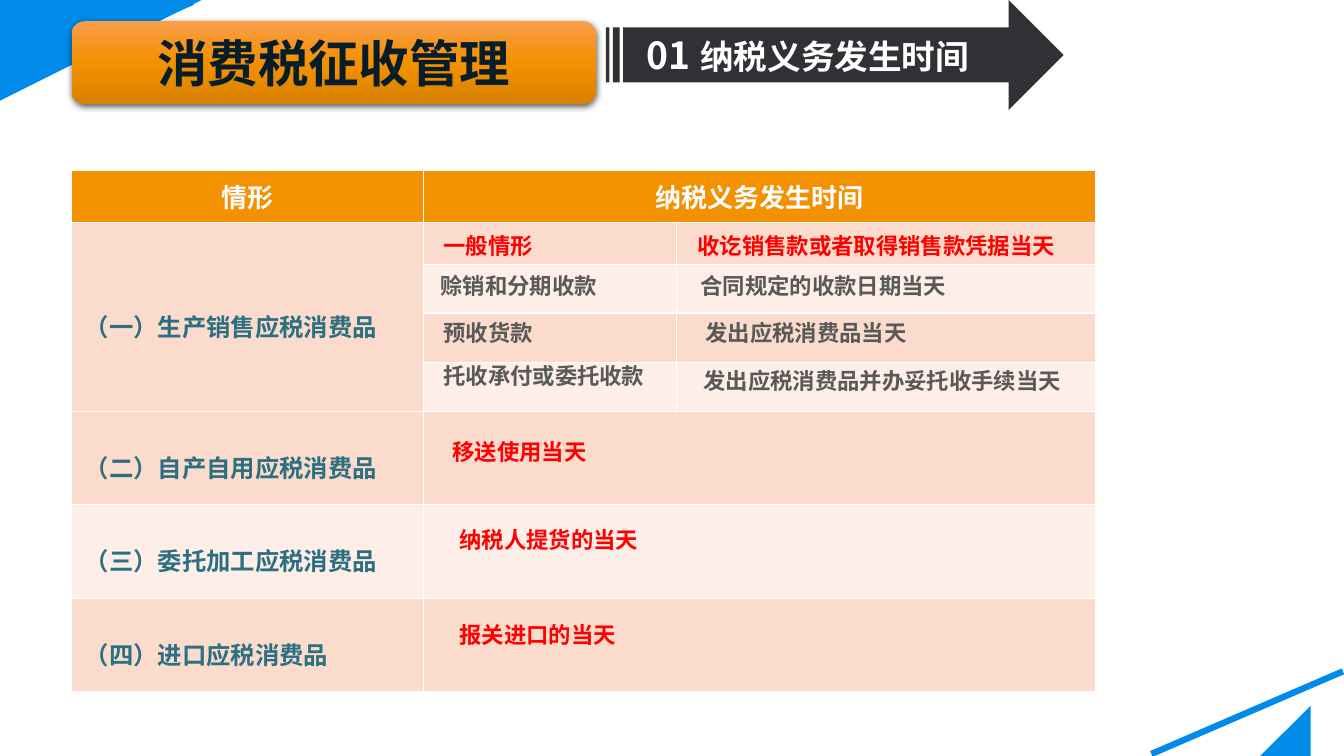
from lxml.etree import SubElement
from pptx import Presentation
from pptx.dml.color import RGBColor
from pptx.enum.shapes import MSO_CONNECTOR, MSO_SHAPE
from pptx.enum.text import MSO_ANCHOR, MSO_AUTO_SIZE, PP_ALIGN
from pptx.oxml import parse_xml
from pptx.oxml.ns import nsdecls, qn
from pptx.util import Inches, Pt

FONT = "Noto Sans CJK SC"
BLUE, ORANGE, RED, GREY, TEAL = "018BE9", "F49100", "FF0000", "595959", "2B6F81"
WHITE, CHARCOAL, NAVY = "FFFFFF", "323034", "071D28"
PEACH, PALE = "FBDCCC", "FDEEE7"
WIDTH, HEIGHT = 13.33, 7.5

COLUMNS = [3.49, 2.51, 4.16]
ROWS = [0.51, 0.42, 0.48, 0.49, 0.49, 0.92, 0.93, 0.93]
HEADINGS = ["情形", "纳税义务发生时间"]
CASES = {
    1: "（一）生产销售应税消费品",
    5: "（二）自产自用应税消费品",
    6: "（三）委托加工应税消费品",
    7: "（四）进口应税消费品",
}
ENTRIES = [
    (3.59, 0.56, 1.09, "一般情形", RED),
    (3.56, 0.96, 1.76, "赊销和分期收款", GREY),
    (3.59, 1.43, 1.09, "预收货款", GREY),
    (3.59, 1.85, 2.2, "托收承付或委托收款", GREY),
    (6.11, 0.56, 3.76, "收讫销售款或者取得销售款凭据当天", RED),
    (6.14, 0.96, 2.64, "合同规定的收款日期当天", GREY),
    (6.19, 1.43, 2.2, "发出应税消费品当天", GREY),
    (6.17, 1.9, 3.76, "发出应税消费品并办妥托收手续当天", GREY),
    (3.68, 2.61, 1.53, "移送使用当天", RED),
    (3.75, 3.48, 1.98, "纳税人提货的当天", RED),
    (3.75, 4.42, 1.76, "报关进口的当天", RED),
]


def colour(value):
    return RGBColor.from_string(value)


def set_font(font, size, value):
    font.size = Pt(size)
    font.bold = True
    font.name = FONT
    font.color.rgb = colour(value)
    latin = font._element.find(qn("a:latin")) if hasattr(font, "_element") else font._rPr.find(qn("a:latin"))
    latin.addnext(parse_xml(f'<a:ea {nsdecls("a")} typeface="{FONT}"/>'))


def write(para, text, size, value, align=PP_ALIGN.LEFT):
    para.text = text
    para.alignment = align
    set_font(para.font, size, value)


def add_corner(page, place):
    points = [place(x, y) for x, y in [(0, 0.74), (0, 0), (1.71, 0)]]
    builder = page.shapes.build_freeform(*points[0], scale=Inches(1))
    builder.add_line_segments(points[1:], close=True)
    triangle = builder.convert_to_shape()
    triangle.shadow.inherit = False
    triangle.fill.solid()
    triangle.fill.fore_color.rgb = colour(BLUE)
    triangle.line.fill.background()
    ends = [Inches(length) for point in [(0.01, 0.84), (1.91, 0.02)] for length in place(*point)]
    stripe = page.shapes.add_connector(MSO_CONNECTOR.STRAIGHT, *ends)
    stripe.line.color.rgb = colour(BLUE)
    stripe.line.width = Pt(4.5)
    SubElement(stripe._element.spPr, qn("a:effectLst"))


def add_schedule(page, left, top):
    frame = page.shapes.add_table(
        len(ROWS), len(COLUMNS), Inches(left), Inches(top), Inches(sum(COLUMNS)), Inches(sum(ROWS)))
    table = frame.table
    table.horz_banding = False
    for column, width in zip(table.columns, COLUMNS):
        column.width = Inches(width)
    for index, (row, height) in enumerate(zip(table.rows, ROWS)):
        row.height = Inches(height)
        for cell in row.cells:
            cell.fill.solid()
            cell.fill.fore_color.rgb = colour(ORANGE if index == 0 else PEACH if index % 2 else PALE)
            cell.vertical_anchor = MSO_ANCHOR.MIDDLE
            cell.margin_left = cell.margin_right = Inches(0.13)
            cell.margin_top = cell.margin_bottom = Inches(0.07)
            cell.text_frame.paragraphs[0].font.size = Pt(10)
    for index in (0, 5, 6, 7):
        table.cell(index, 1).merge(table.cell(index, 2))
    table.cell(1, 0).merge(table.cell(4, 0))
    for index, heading in enumerate(HEADINGS):
        write(table.cell(0, index).text_frame.paragraphs[0], heading, 18.6, WHITE, PP_ALIGN.CENTER)
    for index, case in CASES.items():
        para = table.cell(index, 0).text_frame.paragraphs[0]
        write(para, case, 17.4, TEAL)
        para.line_spacing = 1.5
    for x, y, width, text, value in ENTRIES:
        box = page.shapes.add_textbox(Inches(left + x), Inches(top + y), Inches(width), Inches(0.37))
        box.text_frame.word_wrap = False
        box.text_frame.auto_size = MSO_AUTO_SIZE.SHAPE_TO_FIT_TEXT
        write(box.text_frame.paragraphs[0], text, 16, value)


def add_section_arrow(page, left, top, width, height):
    arrow = page.shapes.add_shape(
        MSO_SHAPE.STRIPED_RIGHT_ARROW, Inches(left), Inches(top), Inches(width), Inches(height))
    arrow.shadow.inherit = False
    arrow.fill.solid()
    arrow.fill.fore_color.rgb = colour(CHARCOAL)
    arrow.line.fill.background()
    box = page.shapes.add_textbox(Inches(left - 0.63), Inches(top + 0.19), Inches(5.26), Inches(0.64))
    box.text_frame.word_wrap = True
    box.text_frame.vertical_anchor = MSO_ANCHOR.MIDDLE
    para = box.text_frame.paragraphs[0]
    para.alignment = PP_ALIGN.CENTER
    for text, size in [("01", 26.6), (" ", 32), ("纳税义务发生时间", 24)]:
        span = para.add_run()
        span.text = text
        set_font(span.font, size, WHITE)


def add_title(page, left, top, width, height):
    area = [Inches(length) for length in (left, top, width, height)]
    banner = page.shapes.add_shape(MSO_SHAPE.ROUNDED_RECTANGLE, *area)
    banner.line.fill.background()
    stops = "".join(
        f'<a:gs pos="{position}"><a:srgbClr val="{value}"/></a:gs>'
        for position, value in [(0, "F99D4B"), (50000, ORANGE), (100000, "D98100")])
    outline = banner._element.spPr.find(qn("a:ln"))
    outline.addprevious(parse_xml(
        f'<a:gradFill {nsdecls("a")} rotWithShape="1"><a:gsLst>{stops}</a:gsLst>'
        '<a:lin ang="5400000" scaled="0"/></a:gradFill>'))
    outline.addnext(parse_xml(
        f'<a:effectLst {nsdecls("a")}><a:outerShdw blurRad="{Pt(4.5)}" dist="{Pt(1.5)}" dir="5400000" '
        'algn="ctr" rotWithShape="0"><a:srgbClr val="000000"><a:alpha val="63000"/></a:srgbClr>'
        '</a:outerShdw></a:effectLst>'))
    title = page.shapes.title
    title.left, title.top, title.width, title.height = area
    title.text_frame.vertical_anchor = MSO_ANCHOR.MIDDLE
    title.text_frame.auto_size = MSO_AUTO_SIZE.NONE
    write(title.text_frame.paragraphs[0], "消费税征收管理", 36, NAVY, PP_ALIGN.CENTER)
    banner._element.addnext(title._element)


def main():
    deck = Presentation()
    deck.slide_width, deck.slide_height = Inches(WIDTH), Inches(HEIGHT)
    page = deck.slides.add_slide(deck.slide_layouts[5])
    add_corner(page, lambda x, y: (WIDTH - x, HEIGHT - y))
    add_corner(page, lambda x, y: (x, y))
    add_schedule(page, 0.71, 1.69)
    add_section_arrow(page, 6.01, 0, 4.54, 1.09)
    add_title(page, 0.71, 0.21, 5.2, 0.82)
    deck.save("out.pptx")


if __name__ == "__main__":
    main()
